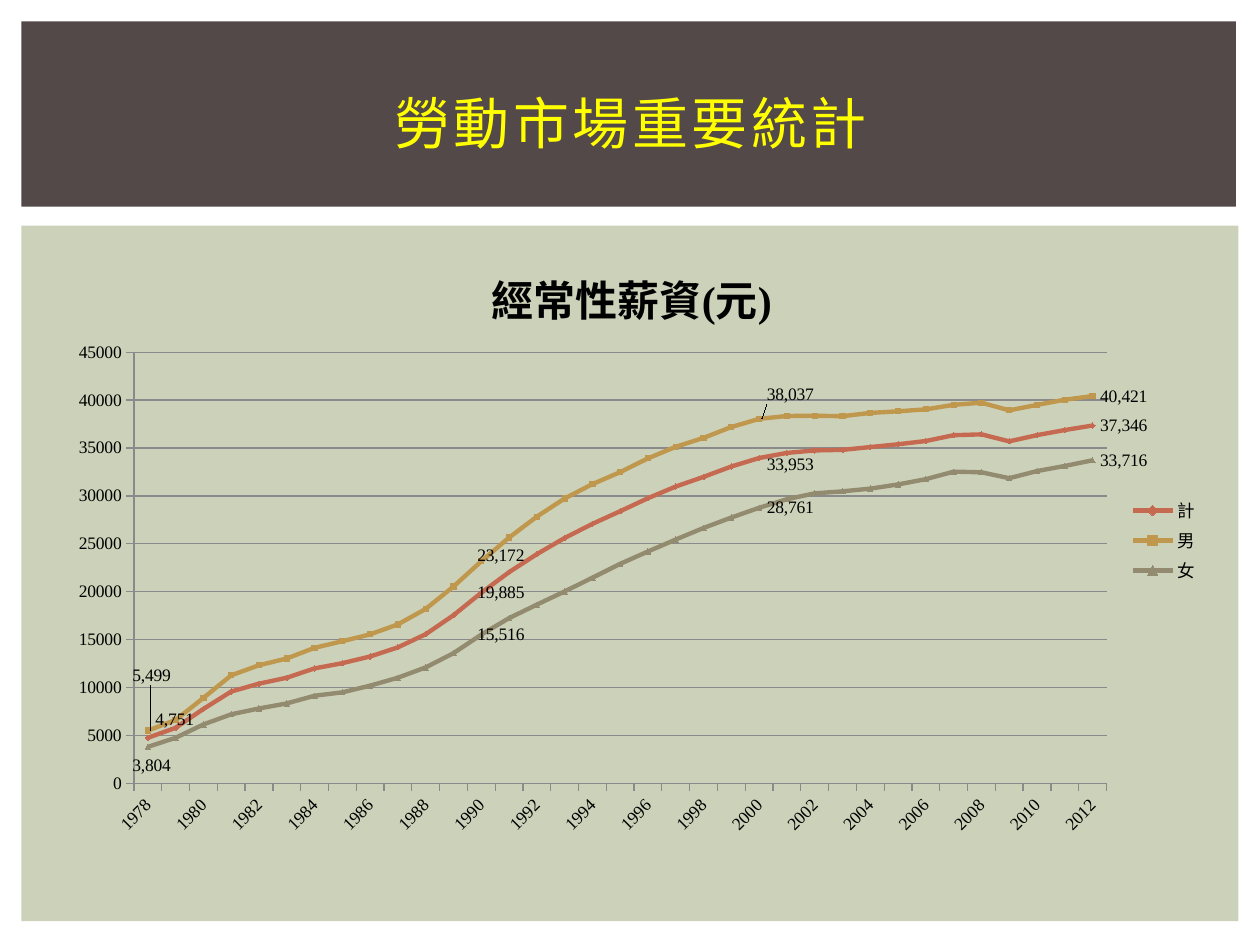
import pptx
import pptx.chart.data
import pptx.dml.color
import pptx.enum.chart
import pptx.enum.shapes
import pptx.enum.text
import pptx.oxml
import pptx.oxml.ns
import pptx.util
from dataclasses import dataclass
from pptx.util import Inches


@dataclass(frozen=True)
class Theme:
    panel: str = "CCD1B9"
    banner: str = "534949"
    heading: str = "FFFF00"
    ink: str = "000000"
    grid: str = "8A8A8A"
    heading_font: str = "Noto Sans CJK SC"
    chart_font: str = "Times New Roman"
    heading_size: int = 32
    chart_title_size: int = 24
    chart_size: int = 10
    series_width: float = 2.5


@dataclass(frozen=True)
class Box:
    left: float
    top: float
    width: float
    height: float

    def lengths(self) -> tuple:
        return tuple(Inches(n) for n in (self.left, self.top, self.width, self.height))


@dataclass(frozen=True)
class Wage:
    name: str
    color: str
    marker: str
    label_shifts: dict
    values: tuple


THEME = Theme()
YEARS = [str(year) for year in range(1978, 2013)]
WAGES = (
    Wage("計", "C66951", "DIAMOND",
         {0: (0, -0.03), 12: (-0.01, 0), 22: (0, 0.01), 34: None},
         (4751, 5789, 7760, 9573, 10396, 11021, 11995, 12534, 13237, 14186, 15562, 17543,
          19885, 22039, 23914, 25610, 27085, 28407, 29761, 30979, 31989, 33068, 33953, 34489,
          34746, 34804, 35101, 35386, 35728, 36335, 36423, 35692, 36343, 36874, 37346)),
    Wage("男", "BF974D", "SQUARE",
         {0: (-0.02, -0.09), 12: (-0.01, -0.01), 22: (0, -0.04), 34: None},
         (5499, 6607, 8905, 11267, 12319, 13030, 14142, 14824, 15545, 16587, 18200, 20541,
          23172, 25650, 27836, 29737, 31232, 32485, 33919, 35125, 36056, 37188, 38037, 38340,
          38363, 38321, 38659, 38833, 39032, 39507, 39728, 38932, 39498, 40037, 40421)),
    Wage("女", "928B70", "TRIANGLE",
         {0: (-0.02, 0.03), 12: (-0.01, 0), 22: None, 34: None},
         (3804, 4748, 6144, 7197, 7810, 8337, 9139, 9492, 10191, 11018, 12097, 13580,
          15516, 17237, 18648, 20027, 21459, 22904, 24194, 25450, 26657, 27742, 28761, 29652,
          30267, 30475, 30760, 31196, 31749, 32532, 32466, 31848, 32595, 33128, 33716)),
)
NAMESPACES = pptx.oxml.ns.nsdecls("c")
LEADER_LINES = f'<c:showLeaderLines {NAMESPACES} val="1"/>'


def rgb(color: str):
    return pptx.dml.color.RGBColor.from_string(color)


def write(frame, text: str, *, font: str, size: float, color: str,
          bold: bool = False, spacing: int = 0) -> None:
    paragraph = frame.paragraphs[0]
    paragraph.alignment = pptx.enum.text.PP_ALIGN.CENTER
    run = paragraph.add_run()
    run.text = text
    run.font.name, run.font.size, run.font.bold = font, pptx.util.Pt(size), bold
    run.font.color.rgb = rgb(color)
    properties = run.font._element
    properties.set("spc", str(spacing * 100))
    east_asian = pptx.oxml.parse_xml(
        f'<a:ea {pptx.oxml.ns.nsdecls("a")} typeface="{THEME.heading_font}"/>')
    properties.find(pptx.oxml.ns.qn("a:latin")).addnext(east_asian)


def add_panel(slide, box: Box, color: str) -> None:
    panel = slide.shapes.add_shape(pptx.enum.shapes.MSO_SHAPE.RECTANGLE, *box.lengths())
    panel.shadow.inherit = False
    panel.fill.solid()
    panel.fill.fore_color.rgb = rgb(color)
    panel.line.fill.background()


def layout_xml(**settings):
    entries = "".join(f'<c:{key} val="{value}"/>' for key, value in settings.items())
    return pptx.oxml.parse_xml(
        f"<c:layout {NAMESPACES}><c:manualLayout>{entries}</c:manualLayout></c:layout>")


def style_series(series, wage: Wage) -> None:
    series.smooth = False
    series.format.line.color.rgb = rgb(wage.color)
    series.format.line.width = pptx.util.Pt(THEME.series_width)
    series.marker.style = pptx.enum.chart.XL_MARKER_STYLE[wage.marker]
    series.marker.size = 3
    series.marker.format.fill.solid()
    series.marker.format.fill.fore_color.rgb = rgb(wage.color)
    series.marker.format.line.color.rgb = rgb(wage.color)
    labels = series.data_labels
    labels.show_value = False
    for index, shift in wage.label_shifts.items():
        series.points[index].data_label.position = pptx.enum.chart.XL_LABEL_POSITION.RIGHT
        if shift:
            label = labels._element.xpath(f'c:dLbl[c:idx/@val="{index}"]')[0]
            label.insert(1, layout_xml(x=shift[0], y=shift[1]))
    for leader in labels._element.xpath("c:showLeaderLines"):
        labels._element.remove(leader)
    labels._element.append(pptx.oxml.parse_xml(LEADER_LINES))


def style_axes(chart) -> None:
    years, amounts = chart.category_axis, chart.value_axis
    for axis in (years, amounts):
        axis.format.line.color.rgb = rgb(THEME.grid)
        axis.major_tick_mark = pptx.enum.chart.XL_TICK_MARK.OUTSIDE
        axis.tick_labels.font.size = pptx.util.Pt(THEME.chart_size)
    amounts.minimum_scale, amounts.maximum_scale, amounts.major_unit = 0, 45000, 5000
    amounts.tick_labels.number_format = "General"
    amounts.tick_labels.number_format_is_linked = False
    amounts.major_gridlines.format.line.color.rgb = rgb(THEME.grid)
    years._element.xpath("c:txPr/a:bodyPr")[0].set("rot", "-2700000")
    skip = pptx.oxml.parse_xml(f'<c:tickLblSkip {NAMESPACES} val="2"/>')
    years._element.xpath("c:noMultiLvlLbl")[0].addprevious(skip)


def add_wage_chart(slide, box: Box) -> None:
    data = pptx.chart.data.CategoryChartData(number_format="#,##0")
    data.categories = YEARS
    for wage in WAGES:
        data.add_series(wage.name, wage.values)
    chart = slide.shapes.add_chart(
        pptx.enum.chart.XL_CHART_TYPE.LINE_MARKERS, *box.lengths(), data).chart
    chart.font.name = THEME.chart_font
    chart.font.size = pptx.util.Pt(THEME.chart_size)
    chart.font.color.rgb = rgb(THEME.ink)
    write(chart.chart_title.text_frame, "經常性薪資(元)", font=THEME.chart_font,
          size=THEME.chart_title_size, color=THEME.ink, bold=True)
    chart.chart_title.include_in_layout = False
    chart.has_legend = True
    chart.legend.position = pptx.enum.chart.XL_LEGEND_POSITION.RIGHT
    chart.legend.include_in_layout = False
    style_axes(chart)
    plot = chart.plots[0]
    plot.vary_by_categories = False
    for series, wage in zip(plot.series, WAGES):
        style_series(series, wage)
    plot_area = chart._chartSpace.xpath("c:chart/c:plotArea")[0]
    for automatic in plot_area.xpath("c:layout"):
        plot_area.remove(automatic)
    plot_area.insert(0, layout_xml(layoutTarget="inner", xMode="edge", yMode="edge",
                                   x=0.07, y=0.19, w=0.84, h=0.71))


def main() -> None:
    deck = pptx.Presentation()
    deck.slide_width, deck.slide_height = Inches(10), Inches(7.5)
    slide = deck.slides.add_slide(deck.slide_layouts[5])
    heading = slide.shapes.title
    add_panel(slide, Box(0.17, 1.79, 9.66, 5.52), THEME.panel)
    add_panel(slide, Box(0.17, 0.17, 9.64, 1.47), THEME.banner)
    slide.shapes._spTree.append(heading._element)
    heading.left, heading.top, heading.width, heading.height = Box(0.42, 0.39, 9.17, 1.15).lengths()
    heading.text_frame.vertical_anchor = pptx.enum.text.MSO_ANCHOR.MIDDLE
    write(heading.text_frame, "勞動市場重要統計", font=THEME.heading_font,
          size=THEME.heading_size, color=THEME.heading, spacing=2)
    add_wage_chart(slide, Box(0.42, 1.88, 9.19, 4.82))
    deck.save("out.pptx")


if __name__ == "__main__":
    main()
